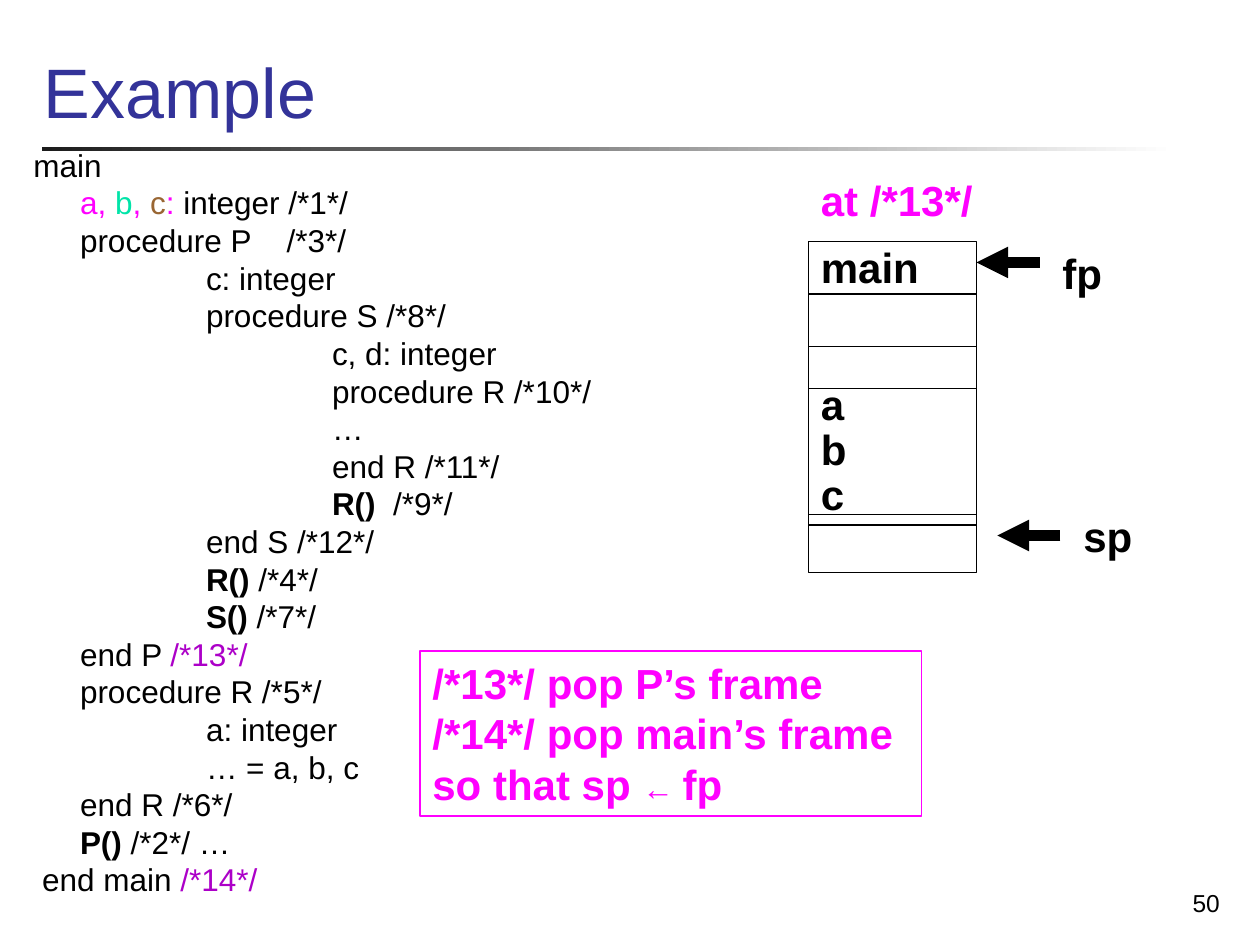
from lxml.etree import SubElement
from pptx import Presentation
from pptx.dml.color import RGBColor as RGB
from pptx.enum.shapes import MSO_CONNECTOR as CONN, MSO_SHAPE as SHAPE
from pptx.enum.text import MSO_ANCHOR as ANCHOR, PP_ALIGN as ALIGN
from pptx.oxml.ns import qn
from pptx.util import Inches, Pt

COLORS = {"black": "000000", "title": "333399", "rule": "1C1C1C", "white": "FFFFFF",
          "pink": "FF00FF", "green": "00E4A8", "brown": "996633", "purple": "AC00C8"}
FONT = "Arial"
WIDTH, HEIGHT = 10, 7.5
UNIT = 1 / 12  # grid step of the drawing, in inches

# Program listing: nesting level, then runs of (text, format)
BOLD = {"bold": True}
PROGRAM = [
    (0, ["main"]),
    (1, [("a,", {"color": "pink"}), (" b", {"color": "green"}), (",", {"color": "pink"}),
         (" c", {"color": "brown"}), (": ", {"color": "pink"}), "integer /*1*/"]),
    (1, ["procedure P", (" ", {"tracking": 15}), "/*3*/"]),
    (2, ["c: integer"]),
    (2, ["procedure S /*8*/"]),
    (3, ["c, d: integer"]),
    (3, ["procedure R /*10*/"]),
    (3, ["…"]),
    (3, ["end R /*11*/"]),
    (3, [("R()", BOLD), (" ", {"tracking": 5}), "/*9*/"]),
    (2, ["end S /*12*/"]),
    (2, [("R()", BOLD), " /*4*/"]),
    (2, [("S()", BOLD), " /*7*/"]),
    (1, ["end P ", ("/*13*/", {"color": "purple"})]),
    (1, ["procedure R /*5*/"]),
    (2, ["a: integer"]),
    (2, ["… = a, b, c"]),
    (1, ["end R /*6*/"]),
    (1, [("P()", BOLD), " /*2*/ …"]),
    (0, [" end main ", ("/*14*/", {"color": "purple"})]),
]


def rgb(name):
    return RGB.from_string(COLORS[name])


def add_runs(paragraph, runs, base):
    for item in runs:
        text, extra = (item, {}) if isinstance(item, str) else item
        style = {**base, **extra}
        run = paragraph.add_run()
        run.text = text
        run.font.color.rgb = rgb(style.pop("color", "black"))
        tracking = style.pop("tracking", 0)
        if tracking:
            run.font._element.set("spc", str(tracking * 100))
        for key, value in {"name": FONT, **style}.items():
            setattr(run.font, key, value)


def write(frame, lines, base, layout=None, wrap=True, anchor=ANCHOR.TOP):
    """Fill a text frame with one paragraph for each list of runs."""
    frame.word_wrap = wrap
    frame.vertical_anchor = anchor
    for index, runs in enumerate(lines):
        paragraph = frame.paragraphs[0] if index == 0 else frame.add_paragraph()
        for key, value in {"alignment": ALIGN.LEFT, **(layout or {})}.items():
            setattr(paragraph, key, value)
        add_runs(paragraph, runs, base)


def text_box(slide, box, lines, base, **options):
    frame = slide.shapes.add_textbox(*map(Inches, box)).text_frame
    write(frame, lines, base, **options)
    return frame


def outline(slide, box, color):
    shape = slide.shapes.add_shape(SHAPE.RECTANGLE, *map(Inches, box))
    shape.shadow.inherit = False
    shape.fill.background()
    shape.line.color.rgb = rgb(color)
    shape.line.width = Pt(0.75)
    return shape.text_frame


def add_line(slide, start, end, weight, arrow=False):
    line = slide.shapes.add_connector(CONN.STRAIGHT, *map(Inches, (*start, *end)))
    line.line.color.rgb = rgb("black")
    line.line.width = Pt(weight)
    if arrow:
        SubElement(line.line._get_or_add_ln(), qn("a:tailEnd"), type="triangle")
    SubElement(line._element.spPr, qn("a:effectLst"))


def header(slide, box):
    left, top, width, height = box
    text_box(slide, box, [["Example"]], {"size": Pt(40), "color": "title"},
             anchor=ANCHOR.BOTTOM)
    # Fading rule under the title
    rule = slide.shapes.add_shape(SHAPE.RECTANGLE, Inches(left + UNIT),
                                  Inches(14 * UNIT), Inches(0.9 * WIDTH), Inches(0.03))
    rule.shadow.inherit = False
    rule.line.fill.background()
    rule.fill.gradient()
    rule.fill.gradient_angle = 0
    for stop, (position, color) in zip(rule.fill.gradient_stops,
                                       ((0, "rule"), (1, "white"))):
        stop.position = position
        stop.color.rgb = rgb(color)


def listing(slide, box):
    layout = {"line_spacing": 0.8, "space_before": Pt(4.2)}
    frame = text_box(slide, box, [runs for _, runs in PROGRAM],
                     {"size": Pt(18)}, layout=layout)
    for paragraph, (level, _) in zip(frame.paragraphs, PROGRAM):
        indent = level - 0.63 if level else 0
        paragraph._p.get_or_add_pPr().set("marL", str(Inches(indent)))


def stack(slide, box):
    left, top, width, height = box
    bold = {"size": Pt(24), "bold": True}
    text_box(slide, (left, top - 7 * UNIT, 1.41, 0.5), [["at /*13*/"]],
             {**bold, "color": "pink"}, wrap=False)
    # Frame of main, with its variables below two empty cells
    frame = outline(slide, box, "black")
    write(frame, [["main"], ["a"], ["b"], ["c"]], bold, layout={"line_spacing": 0.9})
    frame.paragraphs[1].space_before = Pt(2 * 0.9 * 24 * 1.2)
    for row in (5, 10, 14, 26, 27):
        y = top + row * UNIT
        add_line(slide, (left, y), (left + width, y), 0.75)
    # Pointers: label, arrow tip and label place in grid steps from the corner
    right = left + width
    for label, tip_x, tip_y, label_x, label_y in (("fp", 0, 2, 7, 0),
                                                   ("sp", 2, 28, 9, 25)):
        x, y = right + tip_x * UNIT, top + tip_y * UNIT
        add_line(slide, (x + 6 * UNIT, y), (x, y), 6, arrow=True)
        text_box(slide, (right + label_x * UNIT, top + label_y * UNIT, 0.6, 0.51),
                 [[label]], bold, wrap=False)


def remark(slide, box):
    lines = [["/*13*/ pop P’s frame"], ["/*14*/ pop main’s frame"],
             ["so that sp ", ("← ", {"size": Pt(18)}), "fp"]]
    write(outline(slide, box, "pink"), lines,
          {"size": Pt(24), "bold": True, "color": "pink"}, wrap=False)


def page_number(slide, box):
    text_box(slide, box, [["50"]], {"size": Pt(14)},
             layout={"alignment": ALIGN.RIGHT}, anchor=ANCHOR.BOTTOM)


def main():
    deck = Presentation()
    deck.slide_width, deck.slide_height = Inches(WIDTH), Inches(HEIGHT)
    slide = deck.slides.add_slide(deck.slide_layouts[6])
    header(slide, (3 * UNIT, 0, 9.52, 1.1))
    listing(slide, (2 * UNIT, 14 * UNIT, 4.75, 5.08))
    stack(slide, (77 * UNIT, 23 * UNIT, 16 * UNIT, 2.63))
    remark(slide, (40 * UNIT, 62 * UNIT, 3.98, 1.31))
    page_number(slide, (7.7, 6.83, 2.08, 0.5))
    deck.save("out.pptx")


if __name__ == "__main__":
    main()
